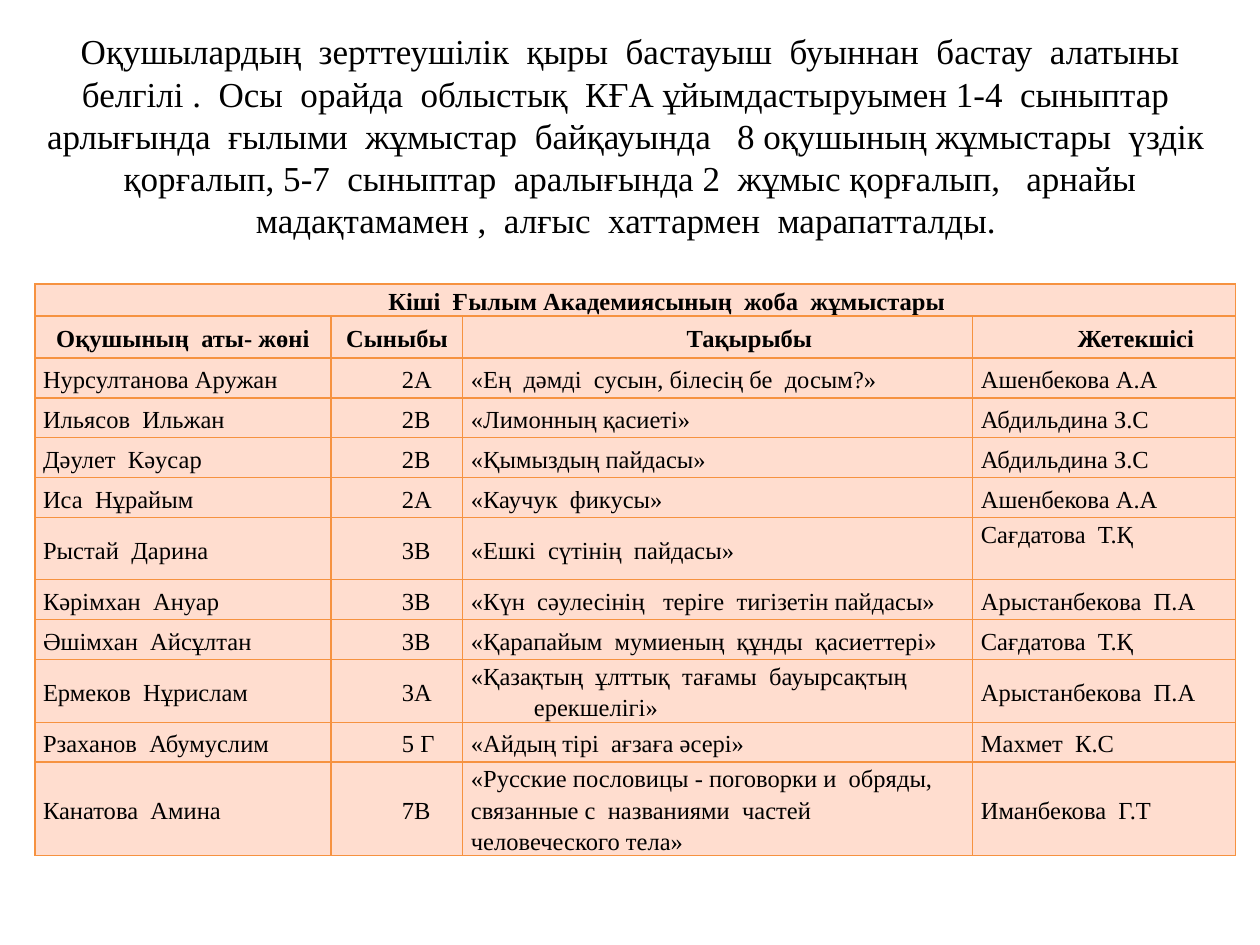
import pptx
import pptx.util
import pptx.dml.color
import pptx.enum.text
import pptx.oxml
import pptx.oxml.ns

RGB = pptx.dml.color.RGBColor
ALIGN = pptx.enum.text.PP_ALIGN
ANCHOR = pptx.enum.text.MSO_ANCHOR
BLACK = RGB(0, 0, 0)
PEACH = RGB(0xFF, 0xDD, 0xCF)
ORANGE = RGB(0xF6, 0x92, 0x40)
FONT = "Times New Roman"
SCALE = 914400 // 126

TITLE = (
    " Оқушылардың  зерттеушілік  қыры  бастауыш  буыннан  бастау  алатыны  "
    "белгілі .  Осы  орайда  облыстық  КҒА ұйымдастыруымен 1-4  сыныптар  "
    "арлығында  ғылыми  жұмыстар  байқауында   8 оқушының жұмыстары  үздік  "
    "қорғалып, 5-7  сыныптар  аралығында 2  жұмыс қорғалып,   арнайы "
    "мадақтамамен ,  алғыс  хаттармен  марапатталды. "
)
BANNER = "Кіші  Ғылым Академиясының  жоба  жұмыстары"
HEADS = ["Оқушының  аты- жөні", "Сыныбы", "Тақырыбы", "Жетекшісі"]
WORKS = [
    ("Нурсултанова Аружан", "2А", "«Ең  дәмді  сусын, білесің бе  досым?»", "Ашенбекова А.А"),
    ("Ильясов  Ильжан", "2В", "«Лимонның қасиеті»", "Абдильдина З.С"),
    ("Дәулет  Кәусар", "2В", "«Қымыздың пайдасы»", "Абдильдина З.С"),
    ("Иса  Нұрайым", "2А", "«Каучук  фикусы»", "Ашенбекова А.А"),
    ("Рыстай  Дарина", "3В", "«Ешкі  сүтінің  пайдасы»", "Сағдатова  Т.Қ"),
    ("Кәрімхан  Ануар", "3В", "«Күн  сәулесінің   теріге  тигізетін пайдасы»", "Арыстанбекова  П.А"),
    ("Әшімхан  Айсұлтан", "3В", "«Қарапайым  мумиеның  құнды  қасиеттері»", "Сағдатова  Т.Қ"),
    ("Ермеков  Нұрислам", "3А", "«Қазақтың  ұлттық  тағамы  бауырсақтың  ерекшелігі»", "Арыстанбекова  П.А"),
    ("Рзаханов  Абумуслим", "5 Г", "«Айдың тірі  ағзаға әсері»", "Махмет  К.С"),
    ("Канатова  Амина", "7В",
     "«Русские пословицы - поговорки и  обряды, связанные с  названиями  частей  человеческого тела»",
     "Иманбекова  Г.Т"),
]
COLS = [296, 132, 510, 263]
ROWS = [32, 42, 40, 40, 40, 40, 62, 40, 40, 62, 40, 93]
STEP = 63
# Left margin and first-line indent of each column
FLAT, INSET, HANG = (0, 0), (STEP, 0), (STEP, -STEP)
HEAD_INDENTS = [FLAT, HANG, INSET, INSET]
BODY_INDENTS = [HANG, INSET, HANG, HANG]


def px(n):
    return pptx.util.Emu(n * SCALE)


def write(para, text, size, bold=False):
    run = para.add_run()
    run.text = text
    run.font.name = FONT
    run.font.size = pptx.util.Pt(size)
    run.font.bold = bold
    run.font.color.rgb = BLACK


def frame(cell):
    """Give the cell its fill and four thin borders."""
    cell.fill.solid()
    cell.fill.fore_color.rgb = PEACH
    props = cell._tc.get_or_add_tcPr()
    for i, side in enumerate("LRTB"):
        props.insert(i, pptx.oxml.parse_xml(
            f'<a:ln{side} {pptx.oxml.ns.nsdecls("a")} w="9525"><a:solidFill>'
            f'<a:srgbClr val="{ORANGE}"/></a:solidFill></a:ln{side}>'))


def fill(cell, text, indent, head=False):
    cell.margin_left = cell.margin_right = px(8)
    cell.margin_top = cell.margin_bottom = 0
    cell.vertical_anchor = ANCHOR.MIDDLE
    para = cell.text_frame.paragraphs[0]
    para.alignment = ALIGN.CENTER if head else ALIGN.LEFT
    para.line_spacing = 1.15
    props = para._p.get_or_add_pPr()
    for name, n in zip(("marL", "indent"), indent):
        props.set(name, str(px(n)))
    write(para, text, 14, head)


def main():
    deck = pptx.Presentation()
    deck.slide_width, deck.slide_height = px(1260), px(945)
    slide = deck.slides.add_slide(deck.slide_layouts[5])

    title = slide.shapes.title
    title.left, title.top, title.width, title.height = map(px, (25, 16, 1211, 238))
    title.text_frame.vertical_anchor = ANCHOR.MIDDLE
    para = title.text_frame.paragraphs[0]
    para.alignment = ALIGN.CENTER
    write(para, TITLE, 20)

    table = slide.shapes.add_table(
        len(ROWS), len(COLS), px(35), px(284), px(sum(COLS)), px(sum(ROWS))).table
    for col, n in zip(table.columns, COLS):
        col.width = px(n)
    for row, n in zip(table.rows, ROWS):
        row.height = px(n)
    for cell in table.iter_cells():
        frame(cell)

    table.cell(0, 0).merge(table.cell(0, len(COLS) - 1))
    fill(table.cell(0, 0), BANNER, INSET, True)
    for c, text in enumerate(HEADS):
        fill(table.cell(1, c), text, HEAD_INDENTS[c], True)
    for r, work in enumerate(WORKS, 2):
        for c, text in enumerate(work):
            last = r == len(ROWS) - 1 and c == 2
            fill(table.cell(r, c), text, FLAT if last else BODY_INDENTS[c])
    table.cell(6, 3).vertical_anchor = ANCHOR.TOP

    deck.save("out.pptx")


if __name__ == "__main__":
    main()
